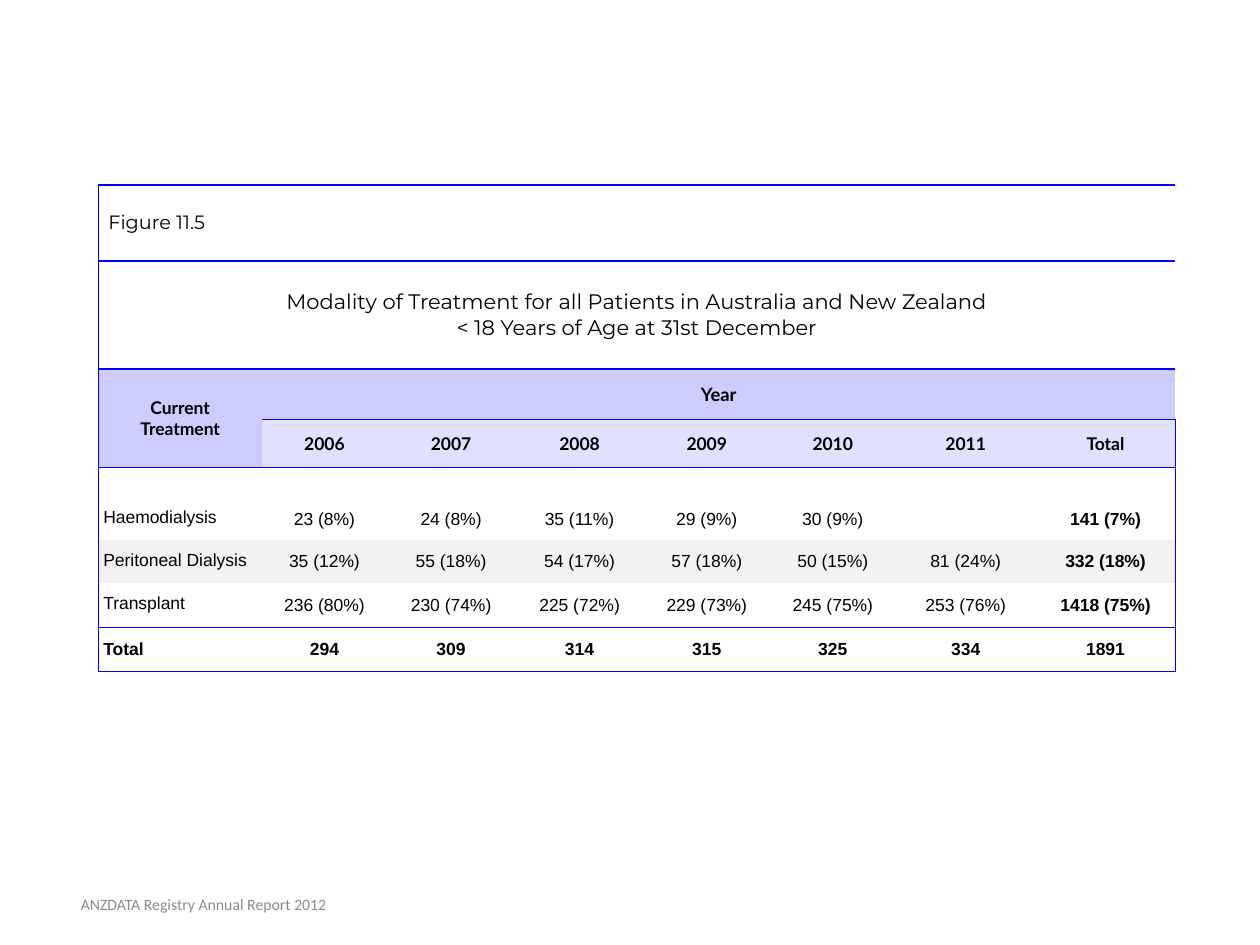
import pptx
import pptx.util
import pptx.dml.color
import pptx.enum.text
import lxml.etree
from pptx.oxml.ns import qn

Inches = pptx.util.Inches
Pt = pptx.util.Pt
ALIGN = pptx.enum.text.PP_ALIGN
MIDDLE = pptx.enum.text.MSO_ANCHOR.MIDDLE

BLUE, BLACK, GREY = "0000FF", "000000", "8C8C8C"
WHITE, LAVENDER, PALE, STRIPE = "FFFFFF", "CCCCFF", "E1E1FF", "F2F2F2"

figure_label = "Figure 11.5"
heading = ["Modality of Treatment for all Patients in Australia and New Zealand",
           "< 18 Years of Age at 31st December"]
treatment_header = ["Current", "Treatment"]
years = ["2006", "2007", "2008", "2009", "2010", "2011", "Total"]
treatments = [
    ["Haemodialysis", "23 (8%)", "24 (8%)", "35 (11%)", "29 (9%)", "30 (9%)", "", "141 (7%)"],
    ["Peritoneal Dialysis", "35 (12%)", "55 (18%)", "54 (17%)", "57 (18%)", "50 (15%)",
     "81 (24%)", "332 (18%)"],
    ["Transplant", "236 (80%)", "230 (74%)", "225 (72%)", "229 (73%)", "245 (75%)",
     "253 (76%)", "1418 (75%)"],
    ["Total", "294", "309", "314", "315", "325", "334", "1891"],
]
source_line = "ANZDATA Registry Annual Report 2012"

column_widths = [1.3, 0.99, 1.02, 1.02, 1, 1, 1.11, 1.11]
row_heights = [0.6, 0.86, 0.4, 0.38, 0.24, 0.34, 0.34, 0.35, 0.35]
LAST_ROW, LAST_COLUMN = len(row_heights) - 1, len(column_widths) - 1
FIRST_TREATMENT_ROW = 5
RULED_ROWS = {0, 1, 2, 3, 7, 8}
row_fills = {2: LAVENDER, 3: PALE, 6: STRIPE}


def rgb(value):
    return pptx.dml.color.RGBColor.from_string(value)


def write(frame, lines, font, size, bold=False, align=ALIGN.CENTER, color=BLACK, spacing=None):
    frame.text = "\n".join(lines)
    for paragraph in frame.paragraphs:
        paragraph.alignment = align
        if spacing:
            paragraph.line_spacing = spacing
        paragraph.font.name = font
        paragraph.font.size = Pt(size)
        paragraph.font.bold = bold
        paragraph.font.color.rgb = rgb(color)


def ruled_below(row, column):
    return row in RULED_ROWS and (row, column) != (2, 0)


def draw_borders(cell, row, column):
    ruled = {
        "L": column == 0,
        "R": column == LAST_COLUMN,
        "T": row == 0 or ruled_below(row - 1, column),
        "B": ruled_below(row, column),
    }
    properties = cell._tc.get_or_add_tcPr()
    for side, visible in ruled.items():
        line = lxml.etree.SubElement(properties, qn("a:ln" + side), w=str(Pt(1)))
        if visible:
            fill = lxml.etree.SubElement(line, qn("a:solidFill"))
            lxml.etree.SubElement(fill, qn("a:srgbClr"), val=BLUE)
        else:
            lxml.etree.SubElement(line, qn("a:noFill"))


def set_margins(cell, margin):
    cell.margin_left = cell.margin_right = Inches(margin)
    cell.margin_top = cell.margin_bottom = Inches(margin)


def build_table(slide):
    table = slide.shapes.add_table(
        len(row_heights), len(column_widths), Inches(0.78), Inches(1.47),
        Inches(sum(column_widths)), Inches(sum(row_heights))).table
    table.first_row = table.horz_banding = False
    for column, width in zip(table.columns, column_widths):
        column.width = Inches(width)
    for row, height in zip(table.rows, row_heights):
        row.height = Inches(height)

    for r in range(len(row_heights)):
        for c in range(len(column_widths)):
            cell = table.cell(r, c)
            set_margins(cell, 0.04)
            cell.vertical_anchor = MIDDLE
            draw_borders(cell, r, c)
            cell.fill.solid()
            cell.fill.fore_color.rgb = rgb(row_fills.get(r, WHITE))
            cell.text_frame.paragraphs[0]._p.get_or_add_endParaRPr().set("sz", "800")

    for first, last in [((0, 0), (0, LAST_COLUMN)), ((1, 0), (1, LAST_COLUMN)),
                        ((2, 0), (3, 0)), ((2, 1), (2, LAST_COLUMN))]:
        table.cell(*first).merge(table.cell(*last))

    set_margins(table.cell(0, 0), 0.08)
    write(table.cell(0, 0).text_frame, [figure_label], "Montserrat", 11, align=ALIGN.LEFT)
    write(table.cell(1, 0).text_frame, heading, "Montserrat", 12)
    write(table.cell(2, 0).text_frame, treatment_header, "Lato", 10, bold=True)
    write(table.cell(2, 1).text_frame, ["Year"], "Lato", 10.5, bold=True)
    for c, year in enumerate(years, 1):
        write(table.cell(3, c).text_frame, [year], "Lato", 10, bold=True)

    for r, values in enumerate(treatments, FIRST_TREATMENT_ROW):
        for c, value in enumerate(values):
            if value:
                write(table.cell(r, c).text_frame, [value], "Arial", 10,
                      bold=r == LAST_ROW or c == LAST_COLUMN,
                      align=ALIGN.CENTER if c else ALIGN.LEFT,
                      spacing=0.75 if c == 0 and r < LAST_ROW else None)


def main():
    deck = pptx.Presentation()
    deck.slide_width, deck.slide_height = Inches(10), Inches(7.5)
    slide = deck.slides.add_slide(deck.slide_layouts[6])
    build_table(slide)
    footer = slide.shapes.add_textbox(Inches(0.03), Inches(6.98), Inches(3.17), Inches(0.4))
    footer.text_frame.word_wrap = True
    footer.text_frame.vertical_anchor = MIDDLE
    write(footer.text_frame, [source_line], "Calibri", 9, color=GREY)
    deck.save("out.pptx")


if __name__ == "__main__":
    main()
